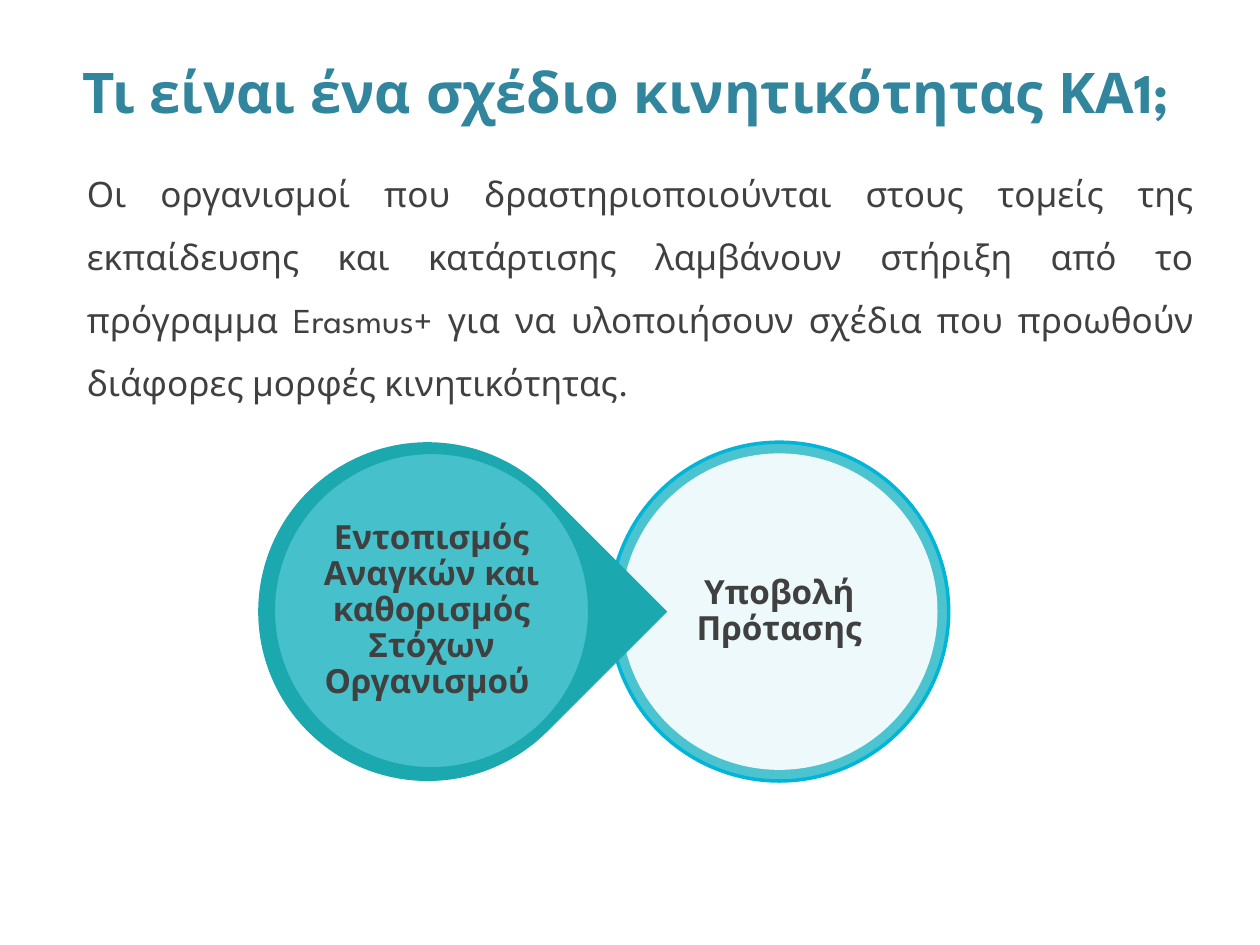
from lxml.etree import SubElement
from pptx import Presentation
from pptx.dml.color import RGBColor
from pptx.enum.shapes import MSO_SHAPE
from pptx.enum.text import MSO_ANCHOR, PP_ALIGN
from pptx.oxml.ns import qn
from pptx.util import Cm, Pt

FONT = "League Spartan"
COLORS = {
    "title": "31859C", "text": "404040", "teal": "4BC4CF",
    "dark": "1BA8AF", "blue": "01B5D9", "white": "FFFFFF",
}

TITLE = "Τι είναι ένα σχέδιο κινητικότητας ΚΑ1;"
BODY = (
    "Οι οργανισμοί που δραστηριοποιούνται στους τομείς της εκπαίδευσης και "
    "κατάρτισης λαμβάνουν στήριξη από το πρόγραμμα Erasmus+ για να υλοποιήσουν "
    "σχέδια που προωθούν διάφορες μορφές κινητικότητας. "
)
# Steps from back to front; centres in cm
STEPS = [
    {"text": "Υποβολή Πρότασης", "shape": MSO_SHAPE.OVAL, "rotation": 0,
     "outer": (15.71, 12.33), "inner": (15.71, 12.33),
     "outer_fill": "teal", "outer_line": "blue",
     "inner_fill": "white", "inner_line": None},
    {"text": "Εντοπισμός Αναγκών και καθορισμός Στόχων Οργανισμού ",
     "shape": MSO_SHAPE.TEAR, "rotation": 45,
     "outer": (8.62, 12.33), "inner": (8.7, 12.31),
     "outer_fill": "dark", "outer_line": None,
     "inner_fill": "teal", "inner_line": "dark"},
]
OUTER, INNER, LABEL = 6.83, 6.38, 4.57  # sizes in cm


def rgb(name):
    return RGBColor.from_string(COLORS[name])


def square(center, size):
    x, y = center
    return x - size / 2, y - size / 2, size, size


def add_shape(s, kind, box, fill, line=None, opacity=None):
    sp = s.shapes.add_shape(kind, *map(Cm, box))
    sp.shadow.inherit = False
    sp.fill.solid()
    sp.fill.fore_color.rgb = rgb(fill)
    if opacity is not None:
        color = sp.fill._xPr.find(qn("a:solidFill"))[0]
        SubElement(color, qn("a:alpha")).set("val", str(opacity * 1000))
    if line:
        sp.line.color.rgb = rgb(line)
        sp.line.width = Pt(2)
    else:
        sp.line.fill.background()
    return sp


def add_text(s, box, text, size, color="text", bold=False, align=PP_ALIGN.CENTER,
             spacing=1.0, anchor=MSO_ANCHOR.MIDDLE, margins=None):
    tf = s.shapes.add_textbox(*map(Cm, box)).text_frame
    tf.word_wrap = True
    tf.vertical_anchor = anchor
    if margins is not None:
        tf.margin_left = tf.margin_right = Cm(margins)
        tf.margin_top = tf.margin_bottom = Cm(margins)
    p = tf.paragraphs[0]
    p.text = text
    p.alignment = align
    p.line_spacing = spacing
    font = p.runs[0].font
    font.name, font.size, font.bold = FONT, Pt(size), bold
    font.color.rgb = rgb(color)


prs = Presentation()
prs.slide_width, prs.slide_height = Cm(25.4), Cm(19.05)
s = prs.slides.add_slide(prs.slide_layouts[6])

# Title and introduction
add_text(s, (0.51, 1.14, 24.21, 1.4), TITLE, 32, "title", True, margins=0)
add_text(s, (1.5, 2.92, 22.81, 5.23), BODY, 20, align=PP_ALIGN.JUSTIFY,
         spacing=1.5, anchor=MSO_ANCHOR.TOP)

# Process steps: outer shape, inner disc, label
for step in STEPS:
    outer = add_shape(s, step["shape"], square(step["outer"], OUTER),
                      step["outer_fill"], step["outer_line"])
    outer.rotation = step["rotation"]
    add_shape(s, MSO_SHAPE.OVAL, square(step["inner"], INNER),
              step["inner_fill"], step["inner_line"], opacity=90)
    add_text(s, square(step["inner"], LABEL), step["text"], 19, bold=True,
             spacing=0.9, margins=0.08)

prs.save("out.pptx")
